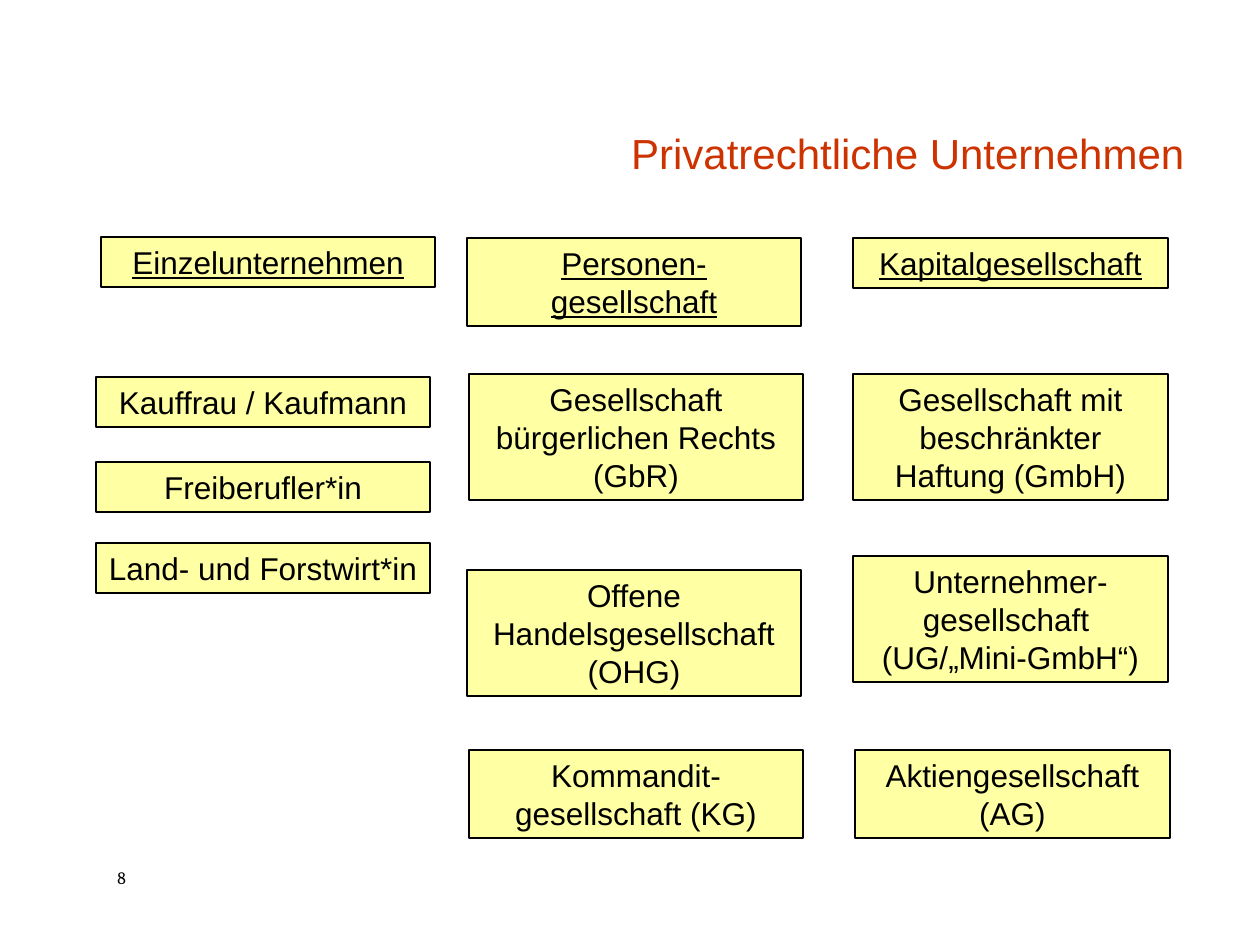
from pptx import Presentation
from pptx.dml.color import RGBColor
from pptx.enum.shapes import MSO_SHAPE
from pptx.enum.text import MSO_ANCHOR, MSO_AUTO_SIZE, PP_ALIGN
from pptx.util import Emu, Inches, Pt

SCALE = Inches(1) / 126
HUES = {"ink": "000000", "box": "FFFFA3", "title": "CC3300"}
HEIGHTS = {1: 50, 2: 88, 3: 126}


def px(size):
    return Emu(round(size * SCALE))


def hue(name):
    return RGBColor.from_string(HUES[name])


def write(frame, text, size=18, font="Arial", color="ink", align=PP_ALIGN.CENTER,
          anchor=MSO_ANCHOR.TOP, line=None, under=None):
    frame.word_wrap = True
    frame.auto_size = MSO_AUTO_SIZE.NONE
    frame.vertical_anchor = anchor
    frame.margin_left = frame.margin_right = Inches(0.1)
    frame.margin_top = frame.margin_bottom = Inches(0.05)
    para = frame.paragraphs[0]
    para.text = text
    para.alignment = align
    para.line_spacing = line
    for run in para.runs:
        run.font.size = Pt(size)
        run.font.name = font
        run.font.underline = under
        run.font.color.rgb = hue(color)


class Deck:
    def __init__(self, show):
        self.slide = show.slides.add_slide(show.slide_layouts[5])

    def title(self, text, x, y, w, h):
        shape = self.slide.shapes.title
        shape.left, shape.top, shape.width, shape.height = map(px, (x, y, w, h))
        write(shape.text_frame, text, size=24, color="title",
              align=PP_ALIGN.RIGHT, anchor=MSO_ANCHOR.BOTTOM, line=0.9)

    def label(self, text, x, y, w, h, **style):
        shape = self.slide.shapes.add_textbox(*map(px, (x, y, w, h)))
        write(shape.text_frame, text, **style)

    def box(self, text, x, y, w, rows, under=None):
        area = map(px, (x, y, w, HEIGHTS[rows]))
        shape = self.slide.shapes.add_shape(MSO_SHAPE.RECTANGLE, *area)
        shape.shadow.inherit = False
        shape.fill.solid()
        shape.fill.fore_color.rgb = hue("box")
        shape.line.color.rgb = hue("ink")
        shape.line.width = Pt(0.75)
        write(shape.text_frame, text, under=under)


COLUMNS = [
    (334, [
        ("Einzelunternehmen", 101, 237, 1),
        ("Kauffrau / Kaufmann", 96, 377, 1),
        ("Freiberufler*in", 96, 462, 1),
        ("Land- und Forstwirt*in", 96, 543, 1),
    ]),
    (334, [
        ("Personen-gesellschaft", 467, 238, 2),
        ("Gesellschaft bürgerlichen Rechts (GbR)", 469, 374, 3),
        ("Offene Handelsgesellschaft (OHG)", 467, 570, 3),
        ("Kommandit-gesellschaft (KG)", 469, 750, 2),
    ]),
    (315, [
        ("Kapitalgesellschaft", 853, 238, 1),
        ("Gesellschaft mit beschränkter Haftung (GmbH)", 853, 374, 3),
        ("Unternehmer-gesellschaft \n(UG/„Mini-GmbH“)", 853, 556, 3),
        ("Aktiengesellschaft (AG)", 855, 750, 2),
    ]),
]


def main():
    show = Presentation()
    show.slide_width, show.slide_height = px(1260), px(945)
    deck = Deck(show)
    deck.title("Privatrechtliche Unternehmen", 263, 53, 934, 132)
    deck.label("8", 105, 861, 84, 36, size=10, font="Cambria", align=PP_ALIGN.LEFT)
    for width, cells in COLUMNS:
        for place, (text, x, y, rows) in enumerate(cells):
            deck.box(text, x, y, width, rows, under=True if place == 0 else None)
    show.save("out.pptx")


if __name__ == "__main__":
    main()
